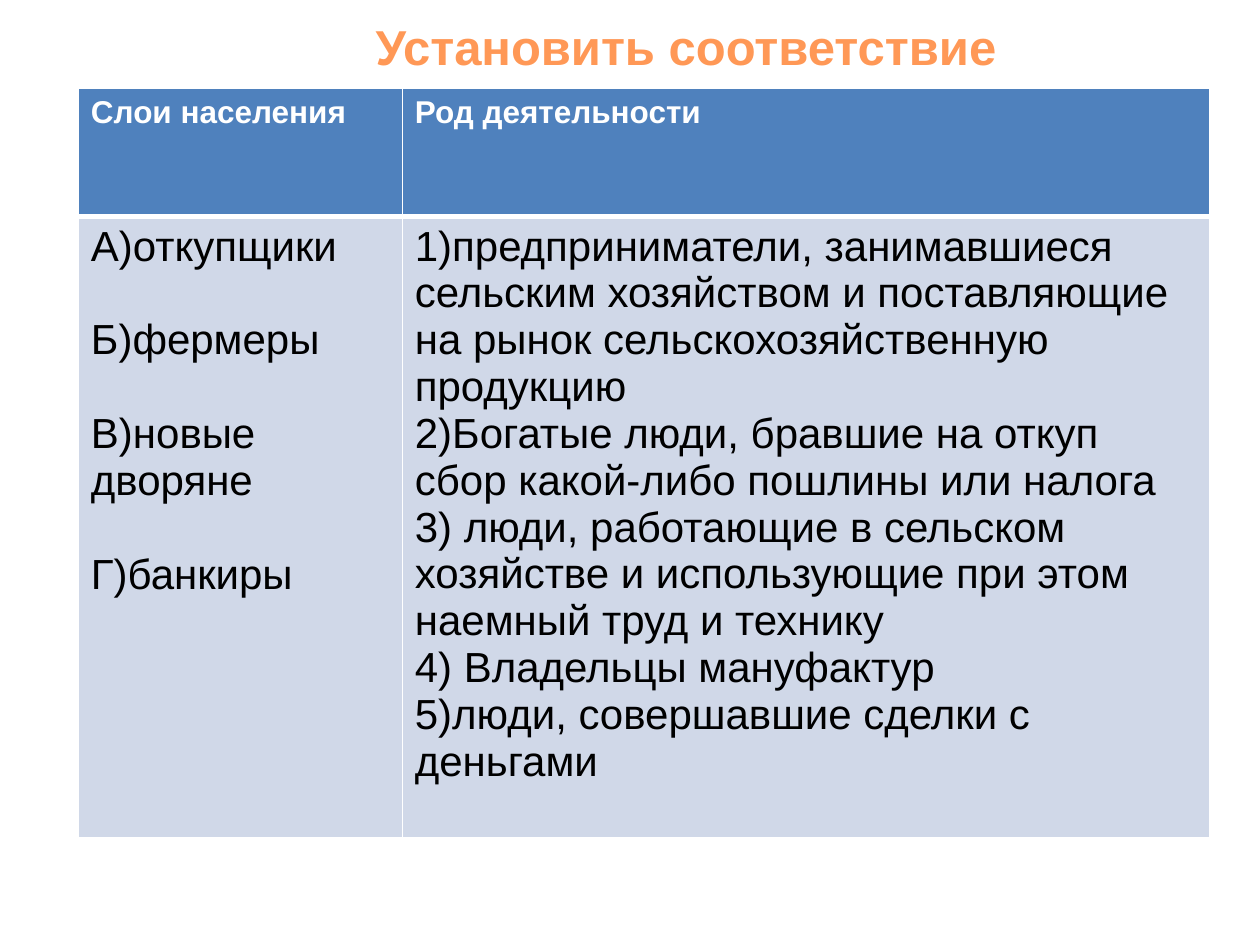
import pptx
import pptx.dml.color
import pptx.enum.text
import pptx.oxml
import pptx.oxml.ns
import pptx.util

Cm = pptx.util.Cm
Pt = pptx.util.Pt

COLORS = {
    "title": "FF9856",
    "header": "4F81BD",
    "body": "D0D8E8",
    "white": "FFFFFF",
    "black": "000000",
}
COLUMN_WIDTHS = [6.53, 16.28]
ROW_HEIGHTS = [2.59, 12.52]
GROUP_GAP = 26.8

HEADERS = ["Слои населения", "Род деятельности"]
GROUPS = [
    ("А)откупщики", 0),
    ("Б)фермеры", GROUP_GAP),
    ("В)новые", GROUP_GAP),
    ("дворяне", 0),
    ("Г)банкиры", GROUP_GAP),
]
OCCUPATIONS = [
    ("1)предприниматели, занимавшиеся сельским хозяйством и поставляющие "
     "на рынок сельскохозяйственную продукцию", 0),
    ("2)Богатые люди, бравшие на откуп сбор какой-либо пошлины или налога", 0),
    ("3) люди, работающие в сельском хозяйстве и использующие при этом "
     "наемный труд и технику", 0),
    ("4) Владельцы мануфактур", 0),
    ("5)люди, совершавшие сделки с деньгами", 0),
]


def rgb(name):
    return pptx.dml.color.RGBColor.from_string(COLORS[name])


def write_text(paragraph, text, size=24, color="black", bold=False, align="LEFT", before=0):
    paragraph.alignment = getattr(pptx.enum.text.PP_ALIGN, align)
    paragraph.space_before = Pt(before)
    run = paragraph.add_run()
    run.text = text
    run.font.name = "Arial"
    run.font.size = Pt(size)
    run.font.bold = bold
    run.font.color.rgb = rgb(color)


def add_title(slide, text):
    shape = slide.shapes.add_textbox(Cm(2.4), Cm(0.14), Cm(22.86), Cm(1.57))
    frame = shape.text_frame
    frame.word_wrap = True
    frame.vertical_anchor = pptx.enum.text.MSO_ANCHOR.MIDDLE
    write_text(frame.paragraphs[0], text, size=28, color="title", bold=True, align="CENTER")


def set_borders(cell, bottom):
    properties = cell._tc.get_or_add_tcPr()
    widths = {"lnL": 1, "lnR": 1, "lnT": 1, "lnB": bottom}
    for position, (side, width) in enumerate(widths.items()):
        properties.insert(position, pptx.oxml.parse_xml(
            f'<a:{side} {pptx.oxml.ns.nsdecls("a")} w="{Pt(width)}"><a:solidFill>'
            f'<a:srgbClr val="{COLORS["white"]}"/></a:solidFill></a:{side}>'))


def fill_cell(cell, lines, fill, bottom=1, **text_format):
    cell.fill.solid()
    cell.fill.fore_color.rgb = rgb(fill)
    set_borders(cell, bottom)
    frame = cell.text_frame
    for index, (text, before) in enumerate(lines):
        paragraph = frame.add_paragraph() if index else frame.paragraphs[0]
        write_text(paragraph, text, before=before, **text_format)


def add_matching_table(slide):
    frame = slide.shapes.add_table(
        2, 2, Cm(1.58), Cm(1.78), Cm(sum(COLUMN_WIDTHS)), Cm(sum(ROW_HEIGHTS)))
    table = frame.table
    for column, width in zip(table.columns, COLUMN_WIDTHS):
        column.width = Cm(width)
    for row, height in zip(table.rows, ROW_HEIGHTS):
        row.height = Cm(height)
    for index, header in enumerate(HEADERS):
        fill_cell(table.cell(0, index), [(header, 0)], "header", bottom=3,
                  size=18, color="white", bold=True)
    for index, lines in enumerate([GROUPS, OCCUPATIONS]):
        fill_cell(table.cell(1, index), lines, "body")
        set_top = table.cell(1, index)._tc.tcPr.find(pptx.oxml.ns.qn("a:lnT"))
        set_top.set("w", str(Pt(3)))


def main():
    presentation = pptx.Presentation()
    presentation.slide_width = Cm(25.4)
    presentation.slide_height = Cm(19.05)
    slide = presentation.slides.add_slide(presentation.slide_layouts[6])
    add_title(slide, "Установить соответствие")
    add_matching_table(slide)
    presentation.save("out.pptx")


if __name__ == "__main__":
    main()
